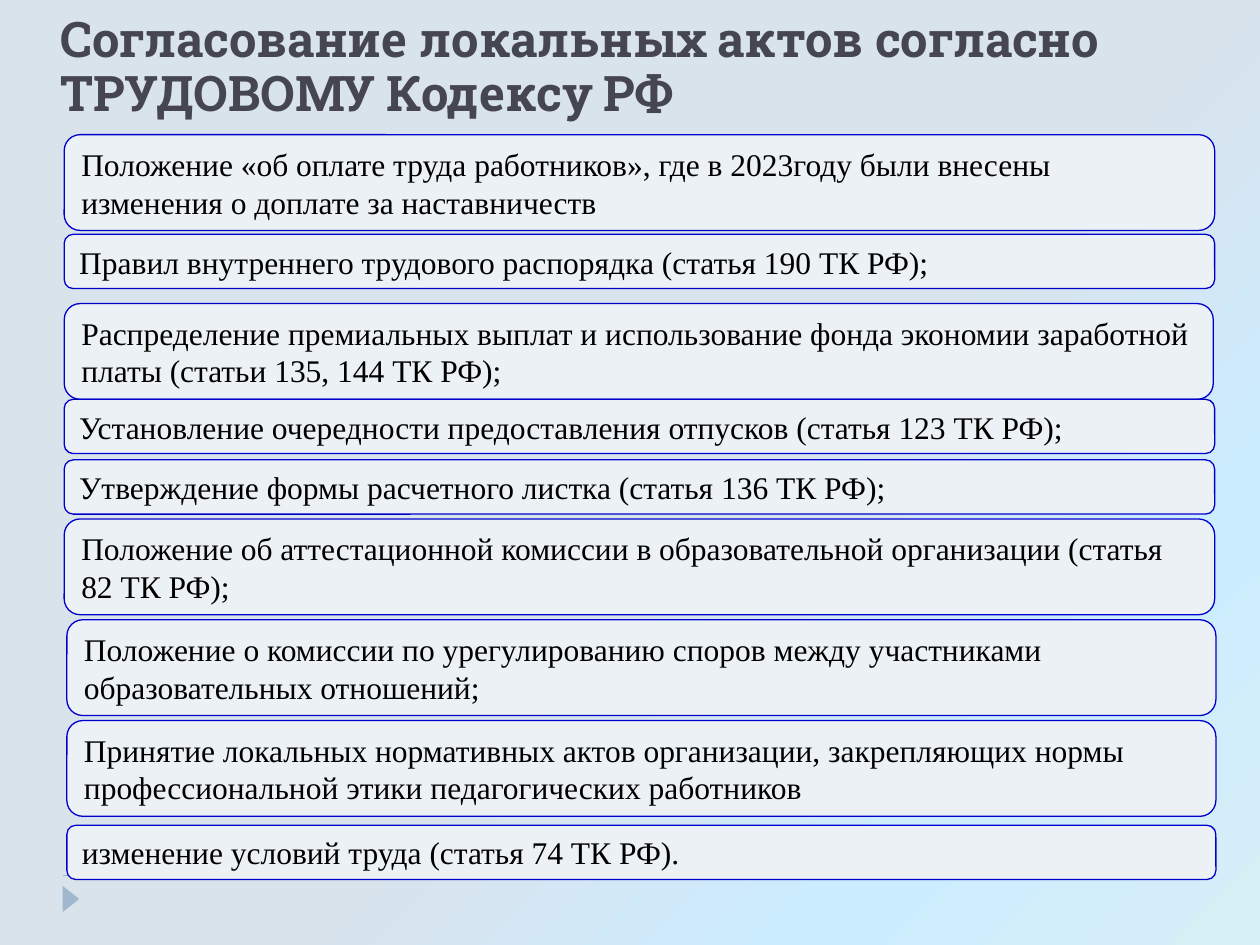
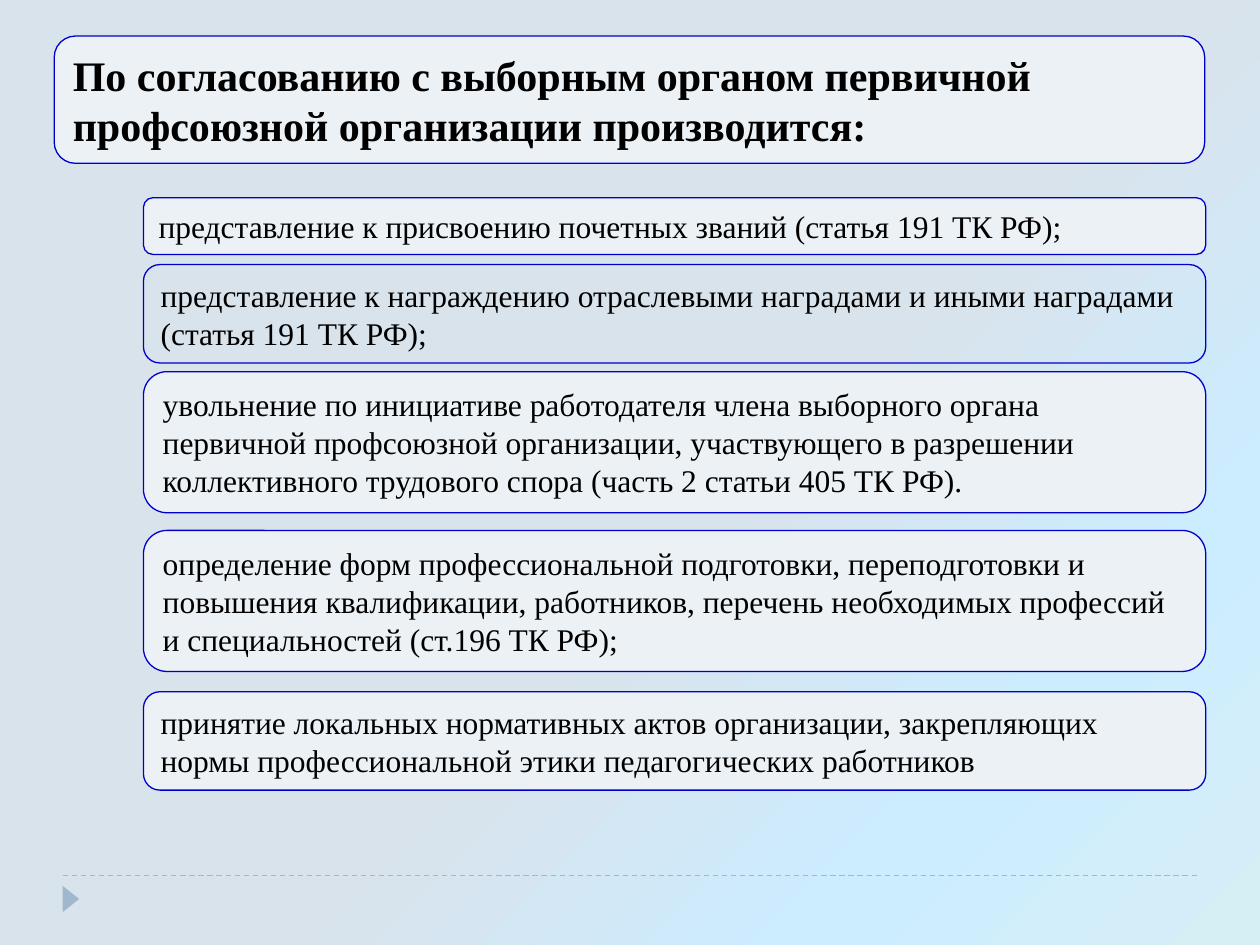
from dataclasses import dataclass
from typing import Optional

from lxml import etree
from pptx import Presentation
from pptx.dml.color import RGBColor
from pptx.enum.dml import MSO_LINE_DASH_STYLE as Dash
from pptx.enum.shapes import MSO_CONNECTOR_TYPE as Connector, MSO_SHAPE as Preset
from pptx.enum.text import MSO_ANCHOR as Anchor, MSO_AUTO_SIZE as AutoSize, PP_ALIGN as Align
from pptx.oxml import parse_xml
from pptx.oxml.ns import nsdecls, qn
from pptx.util import Pt

# Shared look
BODY_FONT, TITLE_FONT = "Times New Roman", "Roboto Slab"
BLACK, TITLE_GREY = "000000", "464653"
PANEL, BORDER, ACCENT = "ECF1F5", "0000CC", "9FB8CD"
BACKGROUND_STOPS = [(55, "D9E3EB"), (79, "CCECFF"), (100, "D5EFF5")]


@dataclass
class Panel:
    top: float
    height: float
    text: str
    left: float
    width: float
    fill: Optional[str] = PANEL
    size: float = 18
    bold: bool = False


def color(value: str) -> RGBColor:
    return RGBColor.from_string(value)


def write_text(box, text: str, *, font: str = BODY_FONT, size: float = 18,
               ink: str = BLACK, bold: bool = False, spacing: float = 1.0,
               anchor=Anchor.MIDDLE) -> None:
    frame = box.text_frame
    frame.word_wrap = True
    frame.vertical_anchor = anchor
    for index, line in enumerate(text.split("\n")):
        para = frame.add_paragraph() if index else frame.paragraphs[0]
        para.alignment = Align.LEFT
        para.line_spacing = spacing
        span = para.add_run()
        span.text = line
        span.font.name = font
        span.font.size = Pt(size)
        span.font.bold = bold
        span.font.color.rgb = color(ink)


def paint_background(page) -> None:
    """Radial gradient spreading from the top left corner."""
    page.background.fill.solid()
    properties = page.background._cSld.find(qn("p:bg")).find(qn("p:bgPr"))
    stops = "".join(
        f'<a:gs pos="{position * 1000}"><a:srgbClr val="{tint}"/></a:gs>'
        for position, tint in BACKGROUND_STOPS)
    gradient = parse_xml(
        f'<a:gradFill {nsdecls("a")} rotWithShape="1"><a:gsLst>{stops}</a:gsLst>'
        '<a:path path="circle"><a:fillToRect r="100000" b="100000"/></a:path></a:gradFill>')
    properties.replace(properties.find(qn("a:solidFill")), gradient)


def draw_footer(page) -> None:
    rule = page.shapes.add_connector(Connector.STRAIGHT, Pt(36), Pt(500.4), Pt(684), Pt(500.4))
    rule.line.color.rgb = color(ACCENT)
    rule.line.width = Pt(0.75)
    rule.line.dash_style = Dash.DASH
    etree.SubElement(rule._element.spPr, qn("a:effectLst"))

    marker = page.shapes.add_shape(Preset.ISOSCELES_TRIANGLE, Pt(33), Pt(509), Pt(15), Pt(9.4))
    marker.rotation = 90
    marker.shadow.inherit = False
    marker.fill.solid()
    marker.fill.fore_color.rgb = color(ACCENT)
    marker.line.fill.background()


def draw_panel(page, panel: Panel) -> None:
    box = page.shapes.add_shape(Preset.ROUNDED_RECTANGLE, Pt(panel.left), Pt(panel.top),
                                Pt(panel.width), Pt(panel.height))
    box.shadow.inherit = False
    if panel.fill:
        box.fill.solid()
        box.fill.fore_color.rgb = color(panel.fill)
    else:
        box.fill.background()
    box.line.color.rgb = color(BORDER)
    box.line.width = Pt(0.75)
    write_text(box, panel.text, size=panel.size, bold=panel.bold)
    box.text_frame.auto_size = AutoSize.SHAPE_TO_FIT_TEXT


def add_page(deck, panels: list[Panel]):
    page = deck.slides.add_slide(deck.slide_layouts[6])
    paint_background(page)
    draw_footer(page)
    for panel in panels:
        draw_panel(page, panel)
    return page


# Slide 1: local acts under the labour code
ONE_LINE, TWO_LINES = 31, 54.7
WIDE = dict(left=36.7, width=657.4)
SHIFTED = dict(left=38.2, width=656.6)
LOCAL_ACTS = [
    Panel(77, TWO_LINES, "Положение «об оплате труда работников», где в 2023году были "
          "внесены изменения о доплате за наставничеств", **WIDE),
    Panel(133.9, ONE_LINE, "Правил внутреннего трудового распорядка (статья 190 ТК РФ);", **WIDE),
    Panel(173.5, TWO_LINES, "Распределение премиальных выплат и использование фонда экономии "
          "заработной платы (статьи 135, 144 ТК РФ);", left=36.7, width=656.6),
    Panel(228.2, ONE_LINE, "Установление очередности предоставления отпусков "
          "(статья 123 ТК РФ);", **WIDE),
    Panel(262.8, ONE_LINE, "Утверждение формы расчетного листка (статья 136 ТК РФ);", **WIDE),
    Panel(296.6, TWO_LINES, "Положение об аттестационной комиссии в образовательной "
          "организации (статья 82 ТК РФ);", **WIDE),
    Panel(354.2, TWO_LINES, "Положение о комиссии по урегулированию споров между "
          "участниками образовательных отношений;", **SHIFTED),
    Panel(411.8, TWO_LINES, "Принятие локальных нормативных актов организации, закрепляющих "
          "нормы профессиональной этики педагогических работников", **SHIFTED),
    Panel(471.6, ONE_LINE, "изменение условий труда (статья 74 ТК РФ).", **SHIFTED),
]

# Slide 2: decisions agreed with the union body
INDENTED = dict(left=82, width=607)
UNION_DECISIONS = [
    Panel(20.6, 72.7, "По согласованию с выборным органом первичной профсоюзной "
          "организации производится:", left=31, width=657.4, size=24, bold=True),
    Panel(113, 32.4, "представление к присвоению почетных званий (статья 191 ТК РФ);", **INDENTED),
    Panel(151.2, 56.2, "представление к награждению отраслевыми наградами и иными наградами\n"
          "(статья 191 ТК РФ);", fill=None, **INDENTED),
    Panel(212.4, 80.6, "увольнение по инициативе работодателя члена выборного органа первичной "
          "профсоюзной организации, участвующего в разрешении коллективного трудового спора "
          "(часть 2 статьи 405 ТК РФ).", **INDENTED),
    Panel(303.1, 80.6, "определение форм профессиональной подготовки, переподготовки и повышения "
          "квалификации, работников, перечень необходимых профессий и специальностей "
          "(ст.196 ТК РФ);", **INDENTED),
    Panel(395.3, 56.2, "принятие локальных нормативных актов организации, закрепляющих нормы "
          "профессиональной этики педагогических работников", **INDENTED),
]


def main() -> None:
    deck = Presentation()
    deck.slide_width, deck.slide_height = Pt(720), Pt(540)

    page = add_page(deck, LOCAL_ACTS)
    title = page.shapes.add_textbox(Pt(27.4), Pt(4.3), Pt(663), Pt(68.4))
    write_text(title, "Согласование локальных актов согласно ТРУДОВОМУ Кодексу РФ",
               font=TITLE_FONT, size=28, ink=TITLE_GREY, bold=True, spacing=0.92,
               anchor=Anchor.TOP)

    add_page(deck, UNION_DECISIONS)
    deck.save("out.pptx")


if __name__ == "__main__":
    main()
